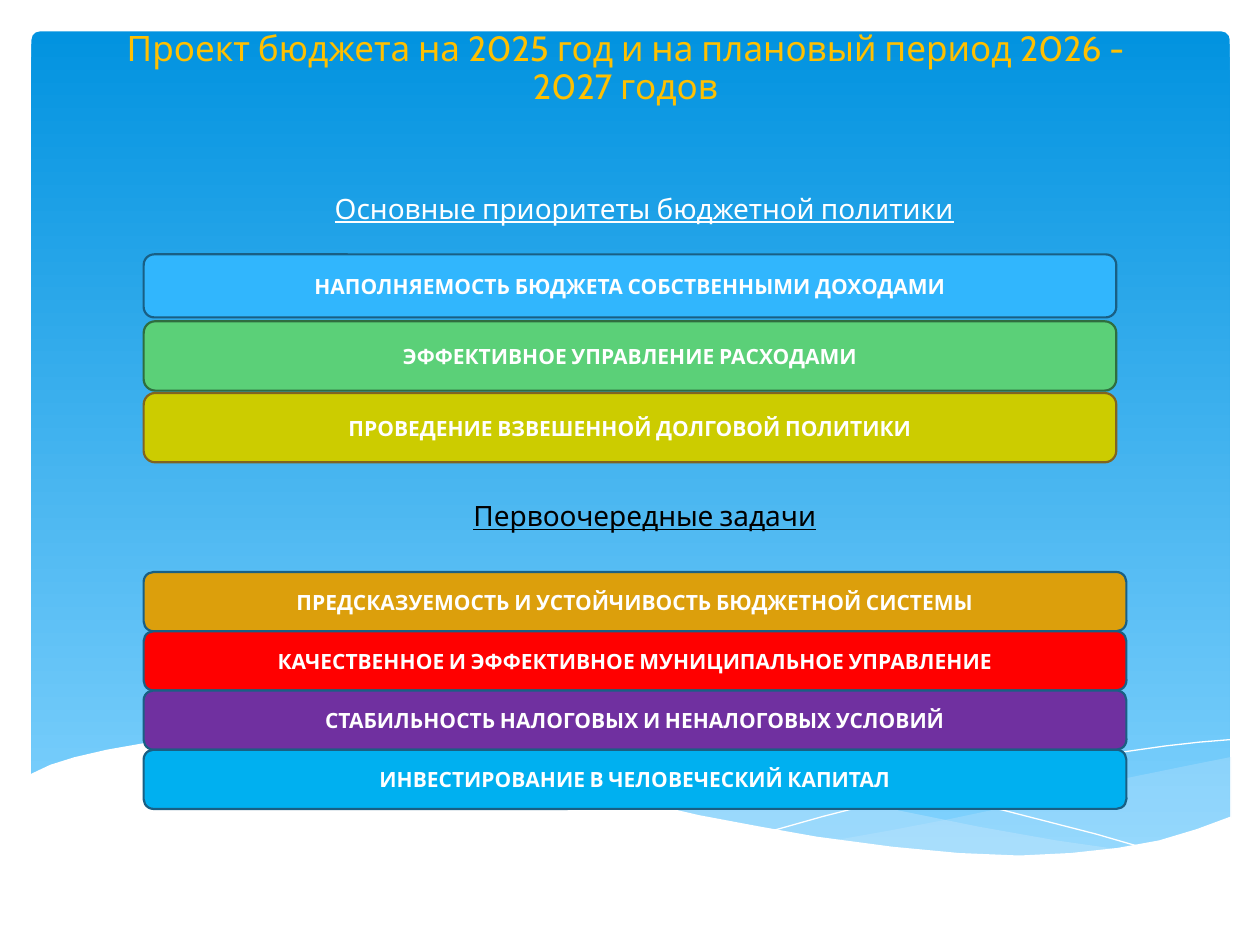
from typing import NamedTuple, Optional

from lxml.etree import SubElement
from pptx import Presentation
from pptx.dml.color import RGBColor
from pptx.enum.shapes import MSO_SHAPE
from pptx.enum.text import MSO_ANCHOR, MSO_AUTO_SIZE, PP_ALIGN
from pptx.oxml.ns import qn
from pptx.util import Pt

FACE = "Cabin"
UNIT = Pt(0.72)


class Box(NamedTuple):
    left: float
    top: float
    width: float
    height: float


class Bar(NamedTuple):
    text: str
    box: Box
    fill: str
    edge: str


class Wave(NamedTuple):
    points: list
    fill: Optional[str] = None
    alpha: int = 100


def tint(code: str) -> RGBColor:
    return RGBColor.from_string(code)


def place(box: Box) -> list:
    return [Pt(side) for side in box]


def apply(target, values: dict) -> None:
    for name, value in values.items():
        setattr(target, name, value)


def write(shape, text: str, color: str, look: dict, anchor=MSO_ANCHOR.TOP) -> None:
    frame = shape.text_frame
    apply(frame, {"word_wrap": True, "auto_size": MSO_AUTO_SIZE.NONE,
                  "vertical_anchor": anchor})
    para = frame.paragraphs[0]
    para.alignment = PP_ALIGN.CENTER
    run = para.add_run()
    run.text = text
    apply(run.font, {"name": FACE, **look})
    run.font.color.rgb = tint(color)


def draw_panel(slide, box: Box) -> None:
    panel = slide.shapes.add_shape(MSO_SHAPE.ROUNDED_RECTANGLE, *place(box))
    panel.shadow.inherit = False
    panel.adjustments[0] = 0.01
    panel.line.fill.background()
    panel.fill.gradient()
    panel.fill.gradient_angle = 270
    for stop, color, spot in zip(panel.fill.gradient_stops, ("0293E0", "83D3FE"), (0, 1)):
        stop.color.rgb = tint(color)
        stop.position = spot


def draw_wave(slide, wave: Wave) -> None:
    first, *rest = wave.points
    pen = slide.shapes.build_freeform(*first, scale=UNIT)
    pen.add_line_segments(rest, close=wave.fill is not None)
    shape = pen.convert_to_shape()
    shape.shadow.inherit = False
    if wave.fill is None:
        shape.fill.background()
        shape.line.color.rgb = tint("FFFFFF")
        shape.line.width = Pt(0)
        return
    shape.line.fill.background()
    shape.fill.solid()
    shape.fill.fore_color.rgb = tint(wave.fill)
    if wave.alpha < 100:
        color = next(shape._element.spPr.iter(qn("a:srgbClr")))
        SubElement(color, qn("a:alpha")).set("val", str(wave.alpha * 1000))


def draw_bar(slide, bar: Bar) -> None:
    shape = slide.shapes.add_shape(MSO_SHAPE.ROUNDED_RECTANGLE, *place(bar.box))
    shape.shadow.inherit = False
    shape.fill.solid()
    shape.fill.fore_color.rgb = tint(bar.fill)
    shape.line.color.rgb = tint(bar.edge)
    shape.line.width = Pt(1.25)
    write(shape, bar.text, "FFFFFF", {"size": Pt(12), "bold": True}, MSO_ANCHOR.MIDDLE)


def draw_head(slide, text: str, box: Box, color: str) -> None:
    head = slide.shapes.add_textbox(*place(box))
    write(head, text, color, {"size": Pt(16), "underline": True})


WAVES = [
    Wave([(976, 601), (936, 609), (892, 618), (862, 625), (806, 639), (754, 650),
          (707, 659), (662, 667), (706, 673), (746, 677), (782, 679), (815, 680),
          (855, 678), (890, 674), (922, 667), (951, 659), (977, 649), (977, 601)],
         "C6E7FC", 29),
    Wave([(894, 675), (838, 667), (776, 656), (707, 642), (630, 624), (584, 613),
          (542, 604), (502, 598), (465, 593), (420, 589), (380, 587), (345, 588),
          (314, 590), (287, 593), (323, 598), (363, 604), (405, 613), (450, 624),
          (530, 642), (602, 657), (666, 668), (723, 676), (774, 679), (819, 680),
          (859, 679), (894, 675)], "C6E7FC", 40),
    Wave([(310, 597), (329, 594), (353, 591), (388, 589), (433, 589), (469, 590),
          (511, 594), (557, 598), (609, 606), (666, 615), (728, 628), (796, 643),
          (870, 662), (908, 673)]),
    Wave([(614, 659), (653, 648), (696, 637), (749, 625), (807, 612), (867, 600),
          (897, 596), (925, 592), (952, 589), (976, 587)]),
    Wave([(977, 648), (950, 658), (920, 667), (887, 673), (850, 677), (809, 679),
          (761, 677), (708, 672), (648, 664), (603, 656), (555, 647), (503, 635),
          (447, 622), (391, 609), (340, 599), (292, 592), (250, 588), (211, 586),
          (161, 586), (119, 589), (85, 595), (59, 601), (40, 607), (23, 615),
          (23, 731), (977, 731)], "FFFFFF"),
]

GOALS = [
    Bar("НАПОЛНЯЕМОСТЬ БЮДЖЕТА СОБСТВЕННЫМИ ДОХОДАМИ",
        Box(82.1, 145.4, 555.8, 36), "31B6FD", "195F84"),
    Bar("ЭФФЕКТИВНОЕ УПРАВЛЕНИЕ РАСХОДАМИ",
        Box(82.1, 183.6, 555.8, 39.6), "5BD078", "2F6D3F"),
    Bar("ПРОВЕДЕНИЕ ВЗВЕШЕННОЙ ДОЛГОВОЙ ПОЛИТИКИ",
        Box(82.1, 224.6, 555.8, 39.6), "CCCC00", "806421"),
]

TASKS = [
    Bar(text, Box(82.1, 326.9 + 33.84 * row, 561.6, 33.84), fill, "195F84")
    for row, (text, fill) in enumerate([
        ("ПРЕДСКАЗУЕМОСТЬ И УСТОЙЧИВОСТЬ БЮДЖЕТНОЙ СИСТЕМЫ", "DC9F0C"),
        ("КАЧЕСТВЕННОЕ И ЭФФЕКТИВНОЕ МУНИЦИПАЛЬНОЕ УПРАВЛЕНИЕ", "FF0000"),
        ("СТАБИЛЬНОСТЬ НАЛОГОВЫХ И НЕНАЛОГОВЫХ УСЛОВИЙ", "7030A0"),
        ("ИНВЕСТИРОВАНИЕ В ЧЕЛОВЕЧЕСКИЙ КАПИТАЛ", "00B0F0"),
    ])
]


def main() -> None:
    deck = Presentation()
    apply(deck, {"slide_width": Pt(720), "slide_height": Pt(540)})
    slide = deck.slides.add_slide(deck.slide_layouts[5])
    title = slide.shapes.title

    draw_panel(slide, Box(18, 18, 684.7, 475.2))
    for wave in WAVES:
        draw_wave(slide, wave)

    slide.shapes._spTree.append(title._element)
    sides = ("left", "top", "width", "height")
    apply(title, dict(zip(sides, place(Box(48.2, 37.4, 618.5, 27.4)))))
    write(title, "Проект бюджета на 2025 год и на плановый период 2026 - 2027 годов",
          "FFC000", {"size": Pt(20)}, MSO_ANCHOR.BOTTOM)
    title.text_frame.paragraphs[0].line_spacing = 0.9

    draw_head(slide, "Основные приоритеты бюджетной политики",
              Box(59, 105.8, 618.5, 27.4), "FFFFFF")
    for bar in GOALS:
        draw_bar(slide, bar)
    draw_head(slide, "Первоочередные задачи", Box(144.7, 281.5, 447.8, 26.6), "000000")
    for bar in TASKS:
        draw_bar(slide, bar)

    deck.save("out.pptx")


if __name__ == "__main__":
    main()
